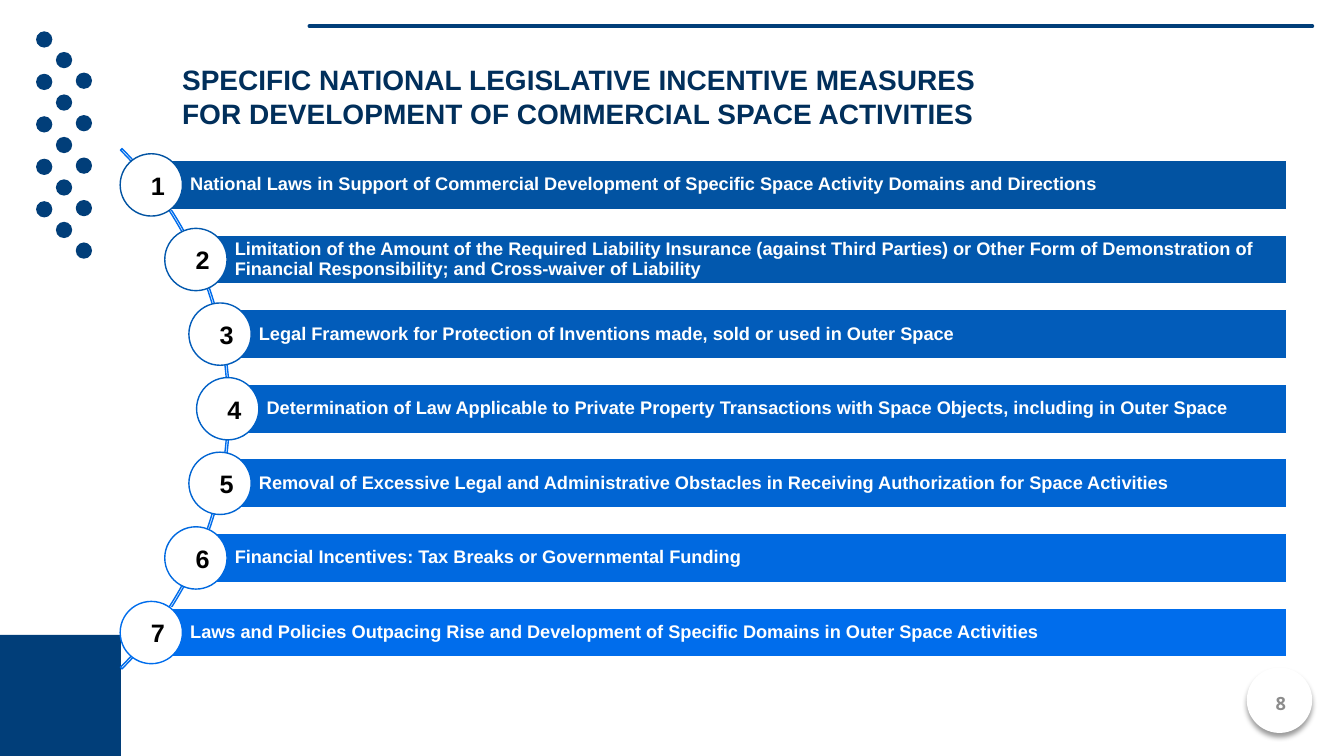
from math import sqrt

from lxml.etree import SubElement
from pptx import Presentation
from pptx.dml.color import RGBColor
from pptx.enum.shapes import MSO_CONNECTOR, MSO_SHAPE as SHAPE
from pptx.enum.text import MSO_ANCHOR as ANCHOR, PP_ALIGN as ALIGN
from pptx.oxml.ns import qn
from pptx.util import Cm, Pt

NAVY, TITLE, WHITE, BLACK, GREY = "013E79", "012F5B", "FFFFFF", "000000", "8C8C8C"
ARC_BLUE = "006DEC"

MEASURES = [
    ("0253A2", "National Laws in Support of Commercial Development of Specific "
               "Space Activity Domains and Directions"),
    ("0258AE", "Limitation of the Amount of the Required Liability Insurance "
               "(against Third Parties) or Other Form of Demonstration of "
               "Financial Responsibility; and Cross-waiver of Liability"),
    ("025CBA", "Legal Framework for Protection of Inventions made, sold or used "
               "in Outer Space"),
    ("0161C7", "Determination of Law Applicable to Private Property Transactions "
               "with Space Objects, including in Outer Space"),
    ("0165D3", "Removal of Excessive Legal and Administrative Obstacles in "
               "Receiving Authorization for Space Activities"),
    ("0069E0", "Financial Incentives: Tax Breaks or Governmental Funding"),
    ("006DEC", "Laws and Policies Outpacing Rise and Development of Specific "
               "Domains in Outer Space Activities"),
]

# Lengths in cm
ARC_X, ARC_Y, ARC_D, ARC_R = -3.48, 10.3, 18.54, 9.22
PITCH, BAR_H, BAR_RIGHT, CIRCLE_D = 1.88, 1.24, 32.42, 1.57


def rgb(hex_colour):
    return RGBColor.from_string(hex_colour)


def add_shape(slide, kind, box, fill=None, line=None):
    sp = slide.shapes.add_shape(kind, *map(Cm, box))
    sp.shadow.inherit = False
    if fill:
        sp.fill.solid()
        sp.fill.fore_color.rgb = rgb(fill)
    else:
        sp.fill.background()
    if line:
        sp.line.color.rgb = rgb(line)
        sp.line.width = Pt(1)
    else:
        sp.line.fill.background()
    return sp


def write(sp, lines, colour, frame=None, para=None, **font):
    """Fill a shape with bold paragraphs; frame, para and font hold format values."""
    tf = sp.text_frame
    tf.word_wrap = True
    for name, value in (frame or {}).items():
        setattr(tf, name, value)
    for i, line in enumerate(lines):
        p = tf.add_paragraph() if i else tf.paragraphs[0]
        for name, value in (para or {}).items():
            setattr(p, name, value)
        r = p.add_run()
        r.text = line
        r.font.color.rgb = rgb(colour)
        for name, value in {"name": "Arial", "bold": True, **font}.items():
            setattr(r.font, name, value)


def add_text(slide, box, lines, colour, **formats):
    write(slide.shapes.add_textbox(*map(Cm, box)), lines, colour, **formats)


def add_dots(slide):
    for row in range(5):
        for col in range(3):
            box = (0.91 + 0.5 * col, 0.79 + 1.07 * row + 0.52 * col, 0.41, 0.41)
            add_shape(slide, SHAPE.OVAL, box, NAVY)


def add_top_rule(slide):
    rule = slide.shapes.add_connector(
        MSO_CONNECTOR.STRAIGHT, Cm(33.07), Cm(0.66), Cm(7.8), Cm(0.66))
    rule.line.color.rgb = rgb(NAVY)
    rule.line.width = Pt(2.83)
    sp_pr = rule._element.spPr
    sp_pr.find(qn("a:ln")).set("cap", "rnd")
    SubElement(sp_pr, qn("a:effectLst"))


def add_page_number(slide, number):
    sp = add_shape(slide, SHAPE.OVAL, (31.42, 16.82, 1.65, 1.65), WHITE)
    effects = sp._element.spPr.find(qn("a:effectLst"))
    shadow = SubElement(effects, qn("a:outerShdw"), blurRad=str(Pt(4)),
                        dist=str(Pt(3)), dir="5400000", rotWithShape="0")
    colour = SubElement(shadow, qn("a:srgbClr"), val=BLACK)
    SubElement(colour, qn("a:alpha"), val="40000")
    add_text(slide, (31.34, 17.2, 1.88, 1.02), [number], GREY,
             frame={"vertical_anchor": ANCHOR.MIDDLE},
             para={"alignment": ALIGN.CENTER}, name="Open Sans", size=Pt(13))


def add_arc(slide):
    r = ARC_D / 2
    sp = add_shape(slide, SHAPE.BLOCK_ARC, (ARC_X - r, ARC_Y - r, ARC_D, ARC_D),
                   line=ARC_BLUE)
    for i, value in enumerate((189, 27, 0.003)):
        sp.adjustments[i] = value


def add_measure(slide, index, colour, text):
    """Add one bar and its numbered circle, centred on the arc."""
    dy = (index - len(MEASURES) // 2) * PITCH
    x, y = ARC_X + sqrt(ARC_R ** 2 - dy ** 2), ARC_Y + dy
    bar = add_shape(slide, SHAPE.RECTANGLE,
                    (x, y - BAR_H / 2, BAR_RIGHT - x, BAR_H), colour, WHITE)
    write(bar, [text], WHITE, size=Pt(13),
          frame={"vertical_anchor": ANCHOR.MIDDLE, "margin_left": Cm(0.98),
                 "margin_right": Cm(0.1), "margin_top": Cm(0.1),
                 "margin_bottom": Cm(0.1)},
          para={"alignment": ALIGN.LEFT, "line_spacing": 0.9})
    r = CIRCLE_D / 2
    add_shape(slide, SHAPE.OVAL, (x - r, y - r, CIRCLE_D, CIRCLE_D), WHITE, colour)
    add_text(slide, (x - 0.22, y - 0.5, 0.46, 1.02), [str(index + 1)], BLACK,
             para={"alignment": ALIGN.CENTER}, size=Pt(18))


def main():
    prs = Presentation()
    prs.slide_width, prs.slide_height = Cm(33.87), Cm(19.05)
    slide = prs.slides.add_slide(prs.slide_layouts[6])
    add_shape(slide, SHAPE.RECTANGLE, (0, 16, 3.05, 3.05), NAVY)
    add_dots(slide)
    add_top_rule(slide)
    add_page_number(slide, "8")
    add_text(slide, (4.34, 1.45, 28.27, 1.96),
             ["SPECIFIC NATIONAL LEGISLATIVE INCENTIVE MEASURES",
              "FOR DEVELOPMENT OF COMMERCIAL SPACE ACTIVITIES"],
             TITLE, size=Pt(20))
    add_arc(slide)
    for index, (colour, text) in enumerate(MEASURES):
        add_measure(slide, index, colour, text)
    prs.save("out.pptx")


if __name__ == "__main__":
    main()
